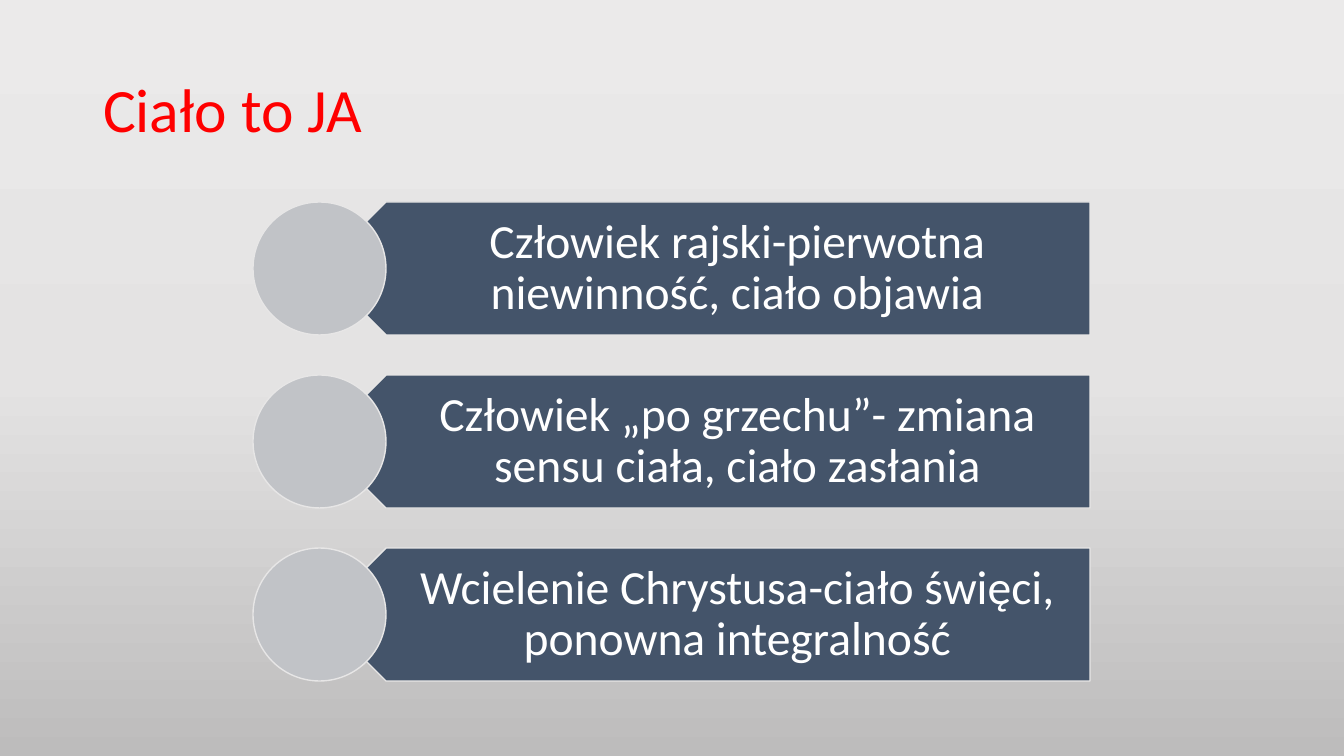
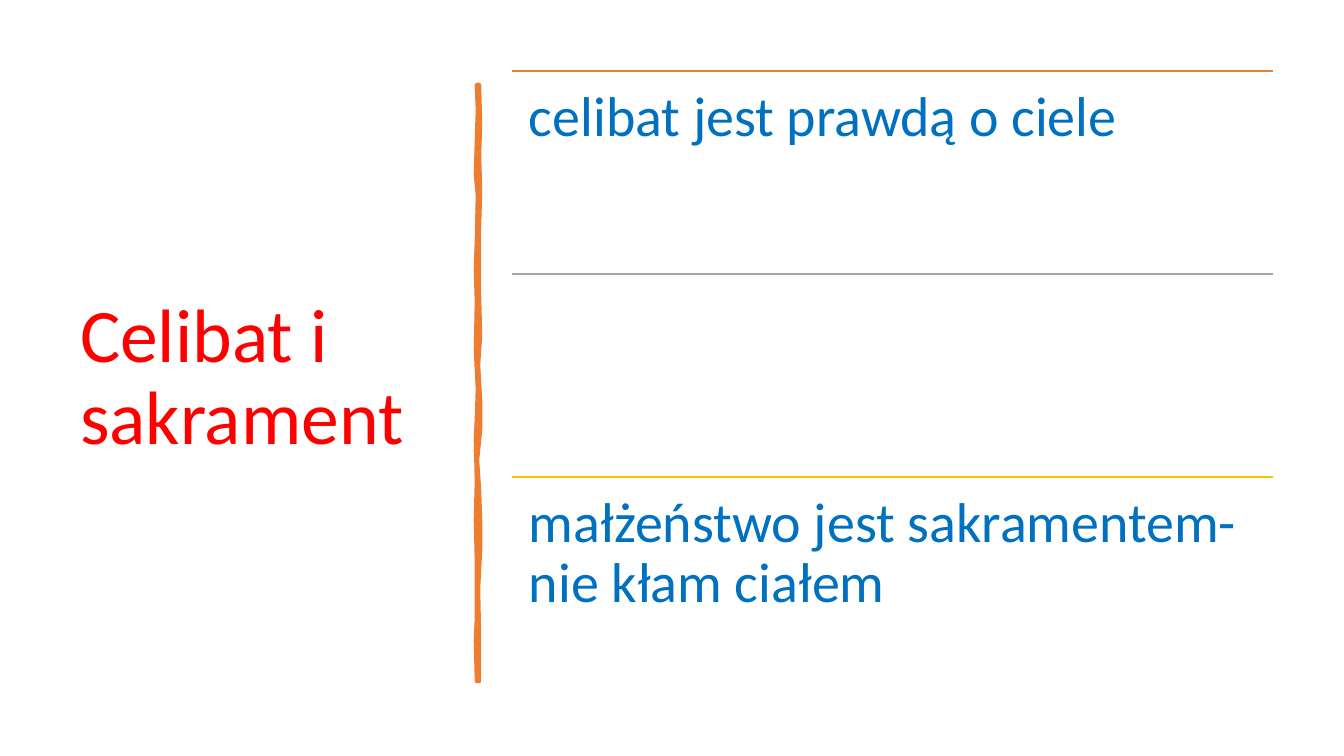
"""Build two slides on the body and on celibacy as a deck."""
from copy import deepcopy

from lxml.etree import SubElement
from pptx import Presentation
from pptx.dml.color import RGBColor
from pptx.enum.shapes import MSO_CONNECTOR, MSO_SHAPE
from pptx.enum.text import MSO_ANCHOR, MSO_AUTO_SIZE, PP_ALIGN
from pptx.oxml.ns import qn
from pptx.util import Emu, Pt

BODY_TITLE = "Ciało to JA"
STAGES = [
    "Człowiek rajski-pierwotna niewinność, ciało objawia",
    "Człowiek „po grzechu”- zmiana sensu ciała, ciało zasłania",
    "Wcielenie Chrystusa-ciało święci, ponowna integralność",
]
VOWS_TITLE = "Celibat i sakrament"
VOWS = [
    ("celibat jest prawdą o ciele", "orange"),
    ("", "grey"),
    ("małżeństwo jest sakramentem-nie kłam ciałem", "gold"),
]
BRUSH_RIGHT = [
    (479, 85), (480, 125), (479, 155), (480, 190), (479, 228), (479, 296),
    (480, 335), (478, 365), (480, 400), (480, 430), (477, 460), (479, 490),
    (480, 520), (480, 550), (478, 589), (479, 635), (479, 681),
]
BRUSH_LEFT = [
    (477, 681), (476, 640), (477, 618), (477, 561), (476, 520), (477, 481),
    (476, 440), (477, 418), (478, 389), (476, 350), (477, 302), (476, 270),
    (477, 240), (478, 195), (476, 175), (477, 140), (478, 110), (477, 85),
]

COLORS = {
    "red": "FF0000", "blue": "0070C0", "white": "FFFFFF", "slate": "44546A",
    "silver": "C1C3C7", "edge": "E7E6E6", "orange": "ED7D31",
    "grey": "A5A5A5", "gold": "FFC000",
    "sky_top": "EBEAEA", "sky_middle": "E4E3E3", "sky_bottom": "BDBCBC",
}
SKY = [("sky_top", 0), ("sky_middle", 0.5), ("sky_bottom", 1)]
FONT = "Calibri"
PX = 914400 / 100.8


def px(length):
    return Emu(round(length * PX))


def color(name):
    return RGBColor.from_string(COLORS[name])


def write(box, text, size, ink, anchor, align=PP_ALIGN.LEFT, insets=None):
    frame = box.text_frame
    frame.text = text
    frame.word_wrap = True
    frame.auto_size = MSO_AUTO_SIZE.NONE
    frame.vertical_anchor = anchor
    if insets:
        (frame.margin_left, frame.margin_top,
         frame.margin_right, frame.margin_bottom) = map(px, insets)
    para = frame.paragraphs[0]
    para.alignment = align
    para.line_spacing = 0.9
    for span in para.runs:
        span.font.name = FONT
        span.font.size = Pt(size)
        span.font.color.rgb = color(ink)


def add_page(deck, title, bounds, size):
    page = deck.slides.add_slide(deck.slide_layouts[5])
    box = page.shapes.title
    box.left, box.top, box.width, box.height = map(px, bounds)
    write(box, title, size, "red", MSO_ANCHOR.MIDDLE)
    return page


def add_text(page, bounds, *style):
    write(page.shapes.add_textbox(*map(px, bounds)), *style)


def paint(shape, fill, line, weight):
    shape.shadow.inherit = False
    shape.fill.solid()
    shape.fill.fore_color.rgb = color(fill)
    shape.line.color.rgb = color(line)
    shape.line.width = Pt(weight)


def add_rule(page, left, right, y, ink):
    rule = page.shapes.add_connector(
        MSO_CONNECTOR.STRAIGHT, px(left), px(y), px(right), px(y))
    rule.line.color.rgb = color(ink)
    rule.line.width = Pt(1)
    SubElement(rule.element.spPr, qn("a:effectLst"))


def paint_sky(page):
    fill = page.background.fill
    fill.gradient()
    fill.gradient_angle = 270
    stop_list = next(page.element.iter(qn("a:gsLst")))
    stop_list.append(deepcopy(stop_list[0]))
    for stop, (name, position) in zip(fill.gradient_stops, SKY):
        stop.color.rgb = color(name)
        stop.position = position


def build_body_page(deck):
    page = add_page(deck, BODY_TITLE, (93, 40, 1159, 146), 44)
    paint_sky(page)
    left, top, right, height, pitch = 253, 202, 1090, 133, 173
    middle = left + height / 2
    text_left = left + height * 3 / 4
    for index, stage in enumerate(STAGES):
        y = top + index * pitch
        ribbon = page.shapes.add_shape(
            MSO_SHAPE.PENTAGON, px(middle), px(y), px(right - middle), px(height))
        ribbon.rotation = 180
        paint(ribbon, "slate", "edge", 1)
        add_text(page, (text_left, y, right - text_left, height), stage, 34,
                 "white", MSO_ANCHOR.MIDDLE, PP_ALIGN.CENTER, (58, 14, 26, 14))
        disc = page.shapes.add_shape(
            MSO_SHAPE.OVAL, px(left), px(y), px(height), px(height))
        paint(disc, "silver", "edge", 1)


def build_vows_page(deck):
    page = add_page(deck, VOWS_TITLE, (70, 71, 377, 616), 54)
    outline = BRUSH_RIGHT + BRUSH_LEFT
    builder = page.shapes.build_freeform(*outline[0], scale=PX)
    builder.add_line_segments(outline[1:], close=True)
    paint(builder.convert_to_shape(), "orange", "orange", 3.25)
    left, right, top, pitch = 512, 1273, 71, 203
    for index, (vow, ink) in enumerate(VOWS):
        y = top + index * pitch
        add_rule(page, left, right, y, ink)
        if vow:
            add_text(page, (left, y, right - left, pitch), vow, 40, "blue",
                     MSO_ANCHOR.TOP, PP_ALIGN.LEFT, (17, 17, 17, 17))


def main():
    deck = Presentation()
    deck.slide_width, deck.slide_height = px(1344), px(756)
    build_body_page(deck)
    build_vows_page(deck)
    deck.save("out.pptx")


if __name__ == "__main__":
    main()
